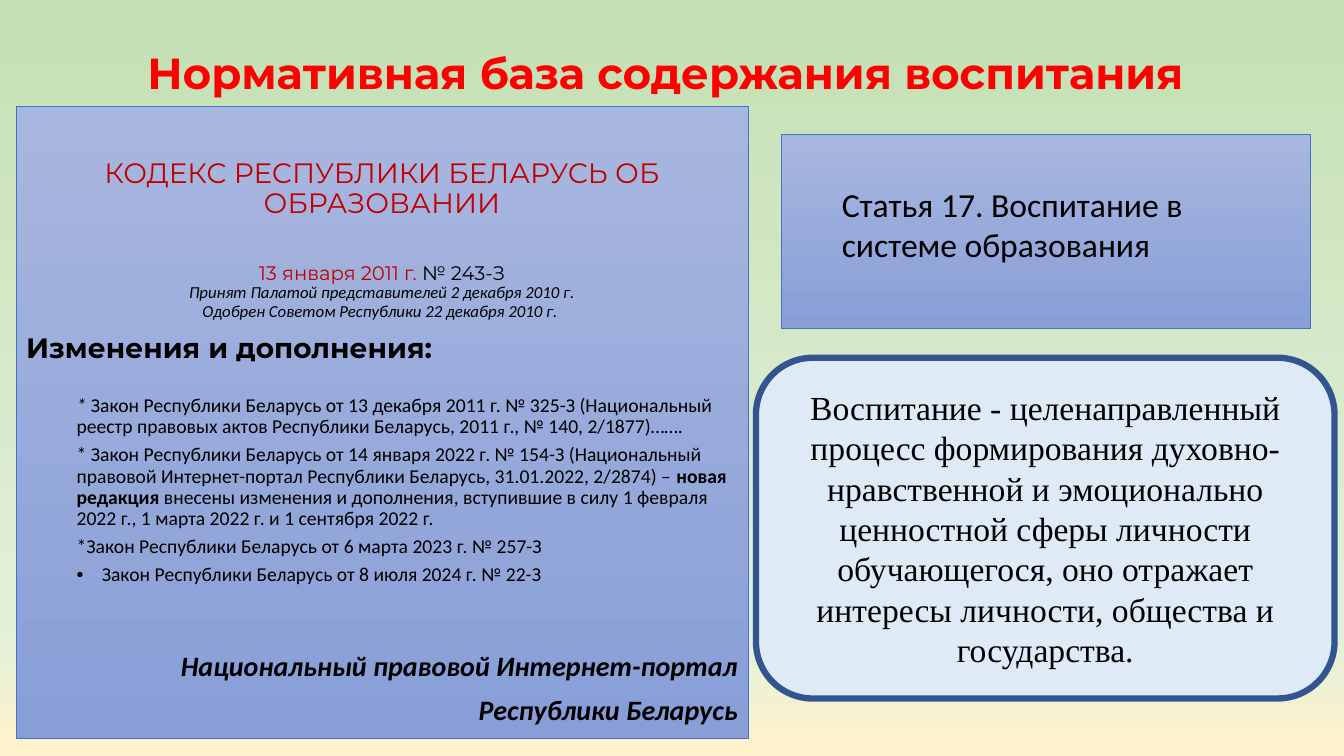
import copy

import pptx
import pptx.dml.color
import pptx.enum.shapes
import pptx.enum.text
import pptx.oxml.ns
import pptx.util

RGB = pptx.dml.color.RGBColor
Pt = pptx.util.Pt
Inches = pptx.util.Inches
ALIGN = pptx.enum.text.PP_ALIGN
ANCHOR = pptx.enum.text.MSO_ANCHOR

WIDE, HIGH = Inches(13.33), Inches(7.5)
BLACK = RGB(0, 0, 0)
RED = RGB(0xFF, 0, 0)
DARK = RGB(0xC0, 0, 0)
GREEN = RGB(0xC5, 0xE0, 0xB4)
MINT = RGB(0xE2, 0xF0, 0xD9)
CREAM = RGB(0xFF, 0xF2, 0xCC)
LIGHT = RGB(0xA8, 0xB7, 0xDF)
DEEP = RGB(0x88, 0x9E, 0xD7)
EDGE = RGB(0x44, 0x72, 0xC4)
PALE = RGB(0xDE, 0xEB, 0xF7)
NAVY = RGB(0x32, 0x54, 0x91)
SANS, HEAD, SERIF = "Calibri", "Montserrat", "Times New Roman"


def place(shape, left, top, width, height):
    shape.left, shape.width = (int(WIDE * n / 100) for n in (left, width))
    shape.top, shape.height = (int(HIGH * n / 100) for n in (top, height))


def style(run, size, font=SANS, color=BLACK, bold=False, slant=False):
    face = run.font
    face.size, face.name = Pt(size), font
    face.bold, face.italic = bold, slant
    face.color.rgb = color


def shade(fill, *colors):
    fill.gradient()
    fill.gradient_angle = 270
    for stop, color in zip(fill.gradient_stops, colors):
        stop.color.rgb = color


def paint(slide):
    fill = slide.background.fill
    shade(fill, GREEN, CREAM)
    stops = slide.element.find(".//" + pptx.oxml.ns.qn("a:gsLst"))
    stops.insert(1, copy.deepcopy(stops[0]))
    for stop, color, spot in zip(fill.gradient_stops, (GREEN, MINT, CREAM), (0, 0.83, 1)):
        stop.color.rgb, stop.position = color, spot


def panel(shape, area, top):
    place(shape, *area)
    shade(shape.fill, LIGHT, DEEP)
    shape.line.color.rgb = EDGE
    shape.line.width = Pt(0.5)
    frame = shape.text_frame
    frame.word_wrap = True
    frame.auto_size = pptx.enum.text.MSO_AUTO_SIZE.NONE
    frame.vertical_anchor = ANCHOR.TOP
    frame.margin_top = Inches(top)
    return frame


def write(para, parts, align=ALIGN.LEFT, before=10, space=0.9, left=0, hang=0):
    para.alignment, para.line_spacing = align, space
    para.space_before, para.space_after = Pt(before), Pt(0)
    props = para._p.get_or_add_pPr()
    props.set("marL", str(Inches(left)))
    props.set("indent", str(-Inches(hang)))
    tag = "a:buChar" if hang else "a:buNone"
    mark = pptx.oxml.parse_xml(f"<{tag} {pptx.oxml.ns.nsdecls('a')}/>")
    if hang:
        mark.set("char", "•")
    props.append(mark)
    for text, look in parts:
        run = para.add_run()
        run.text = text
        style(run, **look)


def fill_code(frame):
    note = dict(size=12, slant=True)
    item = dict(size=14)
    last = dict(size=20, bold=True, slant=True)
    mid = dict(align=ALIGN.CENTER)
    inner = dict(left=0.5, before=5)
    rows = [
        ([("КОДЕКС РЕСПУБЛИКИ БЕЛАРУСЬ ОБ ОБРАЗОВАНИИ",
           dict(size=20, font=HEAD, color=DARK))], dict(mid, before=0)),
        ([("13 января 2011 г. ", dict(size=14, font=HEAD, color=DARK)),
          ("№ 243-З", dict(size=14, font=HEAD))], dict(mid, before=31)),
        ([("Принят Палатой представителей 2 декабря 2010 г.", note)], dict(mid, before=0)),
        ([("Одобрен Советом Республики 22 декабря 2010 г. ", note)], dict(mid, before=0)),
        ([("Изменения и дополнения:", dict(size=20, font=HEAD, bold=True))], {}),
        ([("* ", dict(size=14, slant=True)),
          ("Закон Республики Беларусь от 13 декабря 2011 г. № 325-З (Национальный реестр "
           "правовых актов Республики Беларусь, 2011 г., № 140, 2/1877)…….", item)],
         dict(left=0.5, before=22)),
        ([("* Закон Республики Беларусь от 14 января 2022 г. № 154-З (Национальный правовой "
           "Интернет-портал Республики Беларусь, 31.01.2022, 2/2874) – ", item),
          ("новая редакция", dict(size=14, bold=True)),
          (" внесены изменения и дополнения, вступившие в силу 1 февраля 2022 г., "
           "1 марта 2022 г. и 1 сентября 2022 г.", item)], inner),
        ([("*Закон Республики Беларусь от 6 марта 2023 г. № 257-З", item)], inner),
        ([("Закон Республики Беларусь от 8 июля 2024 г. № 22-З", item)],
         dict(left=0.75, hang=0.25, before=5)),
        ([("Национальный правовой Интернет-портал", last)],
         dict(align=ALIGN.RIGHT, before=47)),
        ([("Республики Беларусь", last)], dict(align=ALIGN.RIGHT)),
    ]
    for spot, (parts, form) in enumerate(rows):
        para = frame.add_paragraph() if spot else frame.paragraphs[0]
        write(para, parts, **form)


def add_card(slide, text, area):
    kind = pptx.enum.shapes.MSO_SHAPE.ROUNDED_RECTANGLE
    card = slide.shapes.add_shape(kind, 0, 0, 0, 0)
    place(card, *area)
    card.shadow.inherit = False
    card.fill.solid()
    card.fill.fore_color.rgb = PALE
    card.line.color.rgb = NAVY
    card.line.width = Pt(4.5)
    frame = card.text_frame
    frame.word_wrap = True
    frame.vertical_anchor = ANCHOR.MIDDLE
    frame.text = text
    para = frame.paragraphs[0]
    para.alignment = ALIGN.CENTER
    style(para.runs[0], 24, SERIF)


def set_title(shape, text):
    place(shape, 3.67, 2.27, 92.55, 15.47)
    frame = shape.text_frame
    frame.text = text
    frame.vertical_anchor = ANCHOR.MIDDLE
    para = frame.paragraphs[0]
    para.alignment, para.line_spacing = ALIGN.CENTER, 0.9
    style(para.runs[0], 31, HEAD, RED, True)


def main():
    deck = pptx.Presentation()
    deck.slide_width, deck.slide_height = WIDE, HIGH
    slide = deck.slides.add_slide(deck.slide_layouts[3])
    paint(slide)
    title, code, clause = slide.placeholders
    set_title(title, "Нормативная база содержания воспитания ")
    fill_code(panel(code, (1.2, 14.13, 54.45, 83.6), 0.52))
    frame = panel(clause, (58.13, 17.73, 39.38, 25.73), 0.49)
    write(frame.paragraphs[0],
          [("Статья 17. Воспитание в системе образования", dict(size=24))],
          before=0, space=1.0, left=0.5)
    add_card(slide, "Воспитание - целенаправленный процесс формирования "
             "духовно-нравственной и эмоционально ценностной сферы личности обучающегося, "
             "оно отражает интересы личности, общества и государства.",
             (56.25, 47.33, 43.05, 45.07))
    deck.save("out.pptx")


if __name__ == "__main__":
    main()
